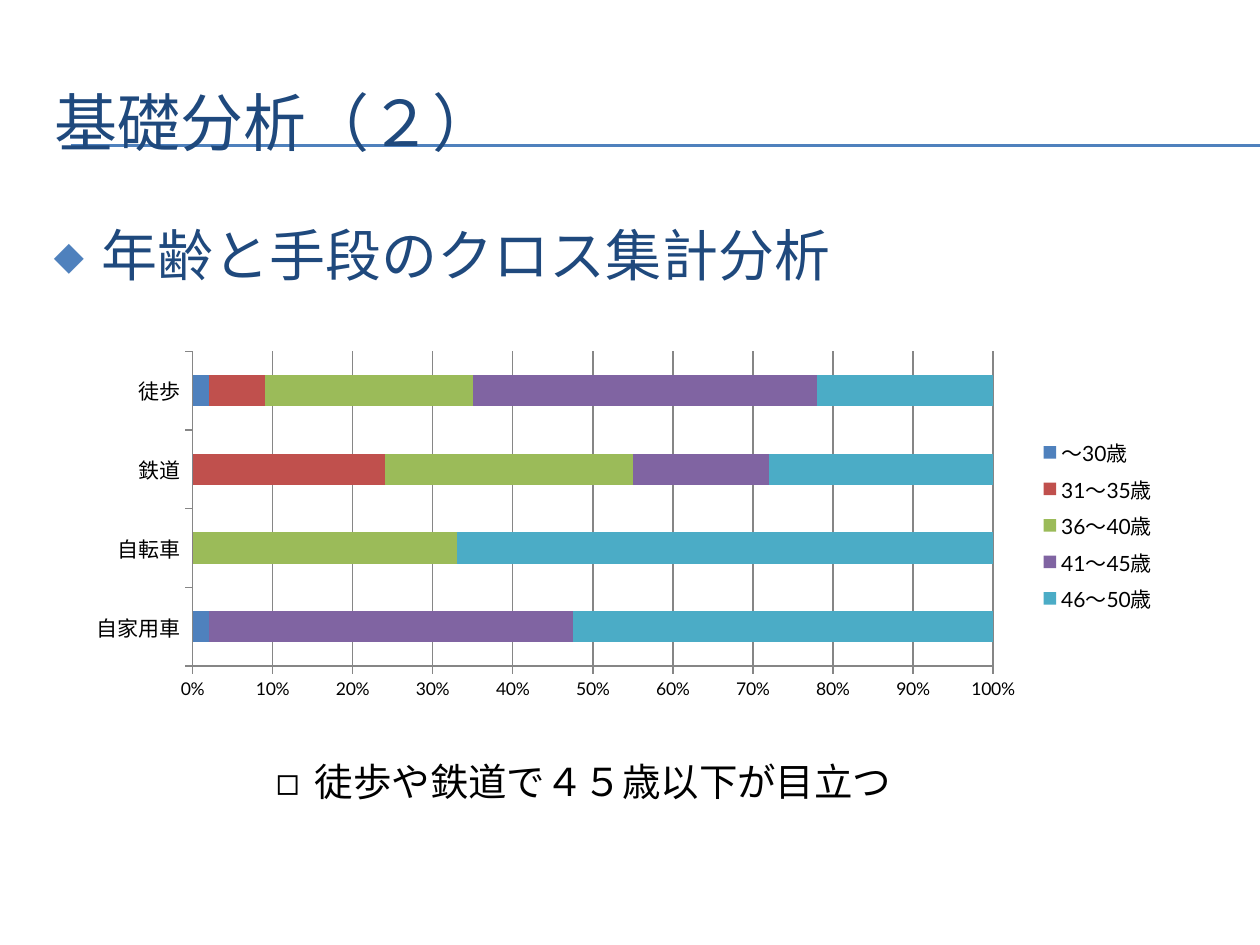
"""Build the slide on the cross tabulation of age and means of transport."""
from lxml import etree
from pptx import Presentation, util as u
from pptx.chart import data
from pptx.dml import color
from pptx.enum import chart as ch, shapes, text
from pptx.oxml import ns

COLORS = {"blue": "4F81BD", "red": "C0504D", "green": "9BBB59", "purple": "8064A2",
          "aqua": "4BACC6", "navy": "1F497D", "black": "000000", "grey": "868686"}
FONT = "Lato"


def style(font, size, name):
    font.name, font.size = FONT, u.Pt(size)
    font.color.rgb = color.RGBColor.from_string(COLORS[name])


def add_bullet(paragraph, char, indent, name, percent):
    props = paragraph._p.get_or_add_pPr()
    props.set("marL", str(u.Inches(indent)))
    props.set("indent", str(-u.Inches(indent)))
    bullet_color = etree.SubElement(props, ns.qn("a:buClr"))
    etree.SubElement(bullet_color, ns.qn("a:srgbClr"), val=COLORS[name])
    etree.SubElement(props, ns.qn("a:buSzPct"), val=str(percent * 1000))
    etree.SubElement(props, ns.qn("a:buFont"), typeface=FONT)
    etree.SubElement(props, ns.qn("a:buChar"), char=char)


prs = Presentation()
prs.slide_width, prs.slide_height = u.Inches(10), u.Inches(7.5)
slide = prs.slides.add_slide(prs.slide_layouts[5])

title = slide.shapes.title
title.left, title.top = u.Inches(0.33), u.Inches(0.5)
title.width, title.height = u.Inches(9.5), u.Inches(0.92)
title.text_frame.text = "基礎分析（２）"
title.text_frame.vertical_anchor = text.MSO_ANCHOR.MIDDLE
heading = title.text_frame.paragraphs[0]
heading.alignment = text.PP_ALIGN.LEFT
style(heading.font, 36, "navy")

for y in (1.15, 1.16):
    rule = slide.shapes.add_connector(
        shapes.MSO_CONNECTOR.STRAIGHT, u.Inches(0.56), u.Inches(y), u.Inches(10), u.Inches(y))
    rule.line.color.rgb = color.RGBColor.from_string(COLORS["blue"])
    rule.line.width = u.Pt(0.75)
    etree.SubElement(rule._element.spPr, ns.qn("a:effectLst"))
    title._element.addprevious(rule._element)

statements = [
    ("年齢と手段のクロス集計分析", (0.33, 1.7, 9.5, 0.87), 32, "navy", "◆", 0.38, "blue", 70, True),
    ("徒歩や鉄道で４５歳以下が目立つ", (2.09, 5.97, 5.15, 0.47), 22, "black", "◻", 0.31, "black", 100, False),
]
for words, place, size, ink, char, indent, bullet_ink, percent, wrap in statements:
    statement = slide.shapes.add_textbox(*map(u.Inches, place)).text_frame
    statement.word_wrap = wrap
    statement.text = words
    line = statement.paragraphs[0]
    if wrap:
        line.space_before = u.Pt(0.2 * size)
    style(line.font, size, ink)
    add_bullet(line, char, indent, bullet_ink, percent)

ages = [
    ("～30歳", (2, 0, 0, 2), "blue"),
    ("31～35歳", (0, 0, 24, 7), "red"),
    ("36～40歳", (0, 33, 31, 26), "green"),
    ("41～45歳", (45, 0, 17, 43), "purple"),
    ("46～50歳", (52, 67, 28, 22), "aqua"),
]
shares = data.CategoryChartData()
shares.categories = ["自家用車", "自転車", "鉄道", "徒歩"]
for age, values, _ in ages:
    shares.add_series(age, values)
chart = slide.shapes.add_chart(
    ch.XL_CHART_TYPE.BAR_STACKED_100, u.Inches(0.59), u.Inches(2.73),
    u.Inches(8.69), u.Inches(2.88), shares).chart
style(chart.font, 10, "black")
chart.has_title = False

bars = chart.plots[0]
bars.gap_width, bars.overlap, bars.vary_by_categories = 150, 100, False
for series, (_, _, name) in zip(bars.series, ages):
    series.format.fill.solid()
    series.format.fill.fore_color.rgb = color.RGBColor.from_string(COLORS[name])

transport, percentage = chart.category_axis, chart.value_axis
style(transport.tick_labels.font, 12, "black")
style(percentage.tick_labels.font, 10, "black")
percentage.has_major_gridlines = True
percentage.minimum_scale, percentage.maximum_scale, percentage.major_unit = 0, 1, 0.1
percentage.tick_labels.number_format = "0%"
percentage.tick_labels.number_format_is_linked = False
for axis in (transport, percentage):
    axis.major_tick_mark = ch.XL_TICK_MARK.OUTSIDE
for part in (transport, percentage, percentage.major_gridlines):
    part.format.line.color.rgb = color.RGBColor.from_string(COLORS["grey"])
    part.format.line.width = u.Pt(0.75)

chart.has_legend = True
chart.legend.position = ch.XL_LEGEND_POSITION.RIGHT
chart.legend.include_in_layout = False
style(chart.legend.font, 12, "black")

prs.save("out.pptx")
